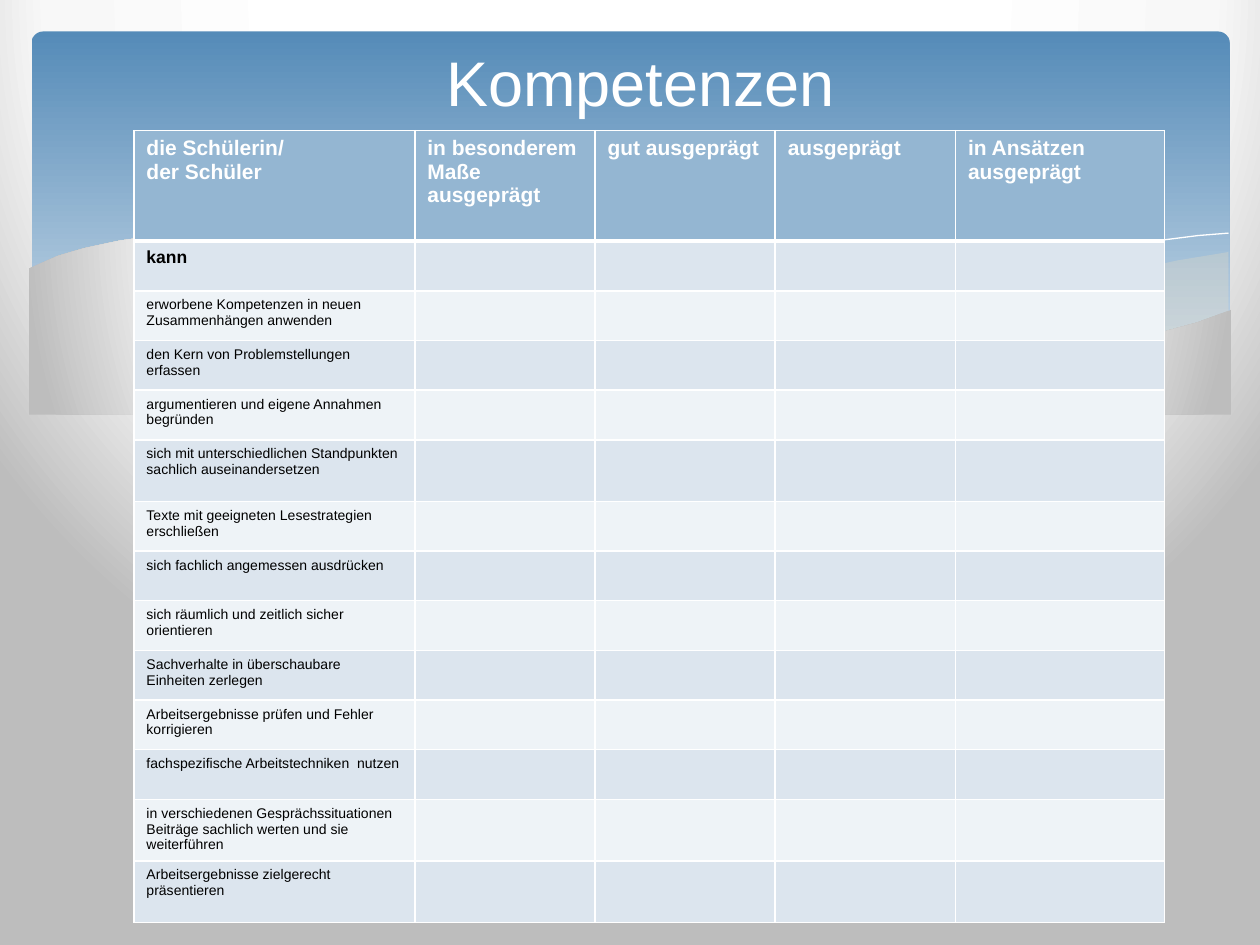
from lxml import etree
from pptx import Presentation
from pptx.dml.color import RGBColor
from pptx.enum import shapes, text
from pptx.oxml import ns, parse_xml
from pptx.util import Pt

WHITE = RGBColor(0xFF, 0xFF, 0xFF)
BLACK = RGBColor(0, 0, 0)
MIST = RGBColor(0xF8, 0xF8, 0xF8)
GREY = RGBColor(0xBD, 0xBD, 0xBD)
BLUE = RGBColor(0x55, 0x8B, 0xB8)
SKY = RGBColor(0xBF, 0xD3, 0xE4)
SAND = RGBColor(0xEB, 0xDD, 0xC3)
HEAD = RGBColor(0x94, 0xB6, 0xD2)
BANDS = (RGBColor(0xEE, 0xF3, 0xF7), RGBColor(0xDC, 0xE5, 0xEE))

GLOW = [(40, WHITE), (74, MIST), (100, GREY)]
ROUND = ('<a:path path="circle"><a:fillToRect l="20000" t="-40000" '
         'r="20000" b="140000"/></a:path>')
DOWN = '<a:lin ang="5400000" scaled="0"/>'

RIGHT = [(702, 144), (673, 148.8), (641.5, 155.5), (599, 165.6), (560.9, 174.2),
         (524.9, 182.2), (475.9, 190.8), (507.6, 194.4), (545, 198.7),
         (586, 200.2), (614.9, 198.7), (645.8, 194.4), (673, 188.6), (702, 177.8)]
WAVE = [(643, 196.6), (602.6, 190.8), (558, 182.9), (508.3, 172.8), (452.9, 159.8),
        (409.7, 149.8), (370.1, 142.6), (334.8, 137.5), (287.3, 133.9),
        (247.7, 133.9), (205.9, 137.5), (246.2, 143.3), (290.9, 151.9),
        (323.3, 159.8), (381.6, 172.8), (432.7, 183.6), (478.8, 191.5),
        (519.8, 197.3), (556.6, 199.4), (596.2, 200.2), (624.2, 198.7)]
CREST = [(222.5, 140.4), (247.7, 136.8), (278.6, 134.6), (311.8, 134.6),
         (352.1, 136.8), (400.3, 141.8), (457.9, 149.8), (523.4, 162.7),
         (598.3, 180.7), (653, 195.8)]
RISE = [(441.4, 185), (483.8, 173.5), (518.4, 164.9), (558.7, 155.5),
        (601.9, 146.9), (644.4, 139.7), (684.7, 134.6), (702, 133.2)]
FRONT = [(703.4, 177.1), (684, 184.3), (655.2, 192.2), (621.4, 197.3),
         (582.5, 199.4), (535.7, 197.3), (481, 190.8), (416.9, 180),
         (362.2, 167.8), (321.8, 158.4), (262.8, 145.4), (210.2, 136.8),
         (165.6, 133.2), (127.4, 132.5), (95, 133.9), (68.4, 137.5),
         (48.2, 141.8), (33.1, 146.2), (16.6, 153.4), (16.6, 236.9),
         (703.4, 236.9)]

TITLES = [["die Schülerin/", "der Schüler"], ["in besonderem Maße ausgeprägt"],
          ["gut ausgeprägt"], ["ausgeprägt"], ["in Ansätzen ausgeprägt"]]
SKILLS = [
    "kann",
    "erworbene Kompetenzen in neuen Zusammenhängen anwenden",
    "den Kern von Problemstellungen erfassen",
    "argumentieren und eigene Annahmen begründen",
    "sich mit unterschiedlichen Standpunkten sachlich auseinandersetzen",
    "Texte mit geeigneten Lesestrategien erschließen",
    "sich fachlich angemessen ausdrücken",
    "sich räumlich und zeitlich sicher orientieren",
    "Sachverhalte in überschaubare Einheiten zerlegen",
    "Arbeitsergebnisse prüfen und Fehler korrigieren",
    "fachspezifische Arbeitstechniken  nutzen",
    "in verschiedenen Gesprächssituationen Beiträge sachlich werten und sie weiterführen",
    "Arbeitsergebnisse zielgerecht präsentieren",
]
WIDTHS = [160.5, 103, 103, 103, 119.5]
TALL = {0: 63.2, 5: 35.2, 12: 35.2, 13: 35.2}
ROW = 28.4


class Deck:
    font = "Arial"

    def __init__(self, wide, high):
        self.prs = Presentation()
        self.prs.slide_width, self.prs.slide_height = Pt(wide), Pt(high)
        self.slide = self.prs.slides.add_slide(self.prs.slide_layouts[6])

    def blend(self, fill, root, stops, kind):
        """Give fill a gradient; root is the element that holds it."""
        fill.gradient()
        old = root.find(".//" + ns.qn("a:gradFill"))
        marks = "".join(f'<a:gs pos="{pos * 1000}"><a:srgbClr val="{tone}"/></a:gs>'
                        for pos, tone in stops)
        new = parse_xml(f'<a:gradFill {ns.nsdecls("a")} rotWithShape="1">'
                        f'<a:gsLst>{marks}</a:gsLst>{kind}</a:gradFill>')
        old.getparent().replace(old, new)

    def back(self, stops, kind):
        self.blend(self.slide.background.fill, self.slide.element, stops, kind)

    def panel(self, x, y, w, h, bend, stops, kind):
        box = self.slide.shapes.add_shape(
            shapes.MSO_SHAPE.ROUNDED_RECTANGLE, Pt(x), Pt(y), Pt(w), Pt(h))
        box.adjustments[0] = bend
        box.shadow.inherit = False
        box.line.fill.background()
        self.blend(box.fill, box.element, stops, kind)

    def trace(self, dots, close):
        """Draw an outline through dots, on a grid of tenths of a point."""
        grid = [(round(x * 10), round(y * 10)) for x, y in dots]
        pen = self.slide.shapes.build_freeform(*grid[0], scale=Pt(0.1))
        pen.add_line_segments(grid[1:], close=close)
        form = pen.convert_to_shape()
        form.shadow.inherit = False
        return form

    def area(self, dots):
        form = self.trace(dots, True)
        form.line.fill.background()
        return form

    def tint(self, dots, tone, part):
        form = self.area(dots)
        form.fill.solid()
        form.fill.fore_color.rgb = tone
        clr = form.element.spPr.find(".//" + ns.qn("a:srgbClr"))
        etree.SubElement(clr, ns.qn("a:alpha"), val=str(part * 1000))

    def curve(self, dots, tone):
        form = self.trace(dots, False)
        form.fill.background()
        form.line.color.rgb = tone
        form.line.width = Pt(0)

    def run(self, para, words, size, tone, bold=False):
        run = para.add_run()
        run.text = words
        run.font.name, run.font.size = self.font, Pt(size)
        run.font.color.rgb, run.font.bold = tone, bold

    def title(self, x, y, w, h, words, size):
        frame = self.slide.shapes.add_textbox(Pt(x), Pt(y), Pt(w), Pt(h)).text_frame
        frame.word_wrap = True
        frame.vertical_anchor = text.MSO_ANCHOR.MIDDLE
        frame.paragraphs[0].alignment = text.PP_ALIGN.CENTER
        self.run(frame.paragraphs[0], words, size, WHITE)

    def edge(self, cell, sides):
        """Put white borders on a cell; sides maps a side to its width."""
        props = cell._tc.get_or_add_tcPr()
        for spot, (side, width) in enumerate(sides.items()):
            props.insert(spot, parse_xml(
                f'<a:ln{side} {ns.nsdecls("a")} w="{Pt(width)}"><a:solidFill>'
                f'<a:srgbClr val="{WHITE}"/></a:solidFill></a:ln{side}>'))

    def cell(self, cell, lines, fill, size, tone, bold, top=1, foot=1):
        cell.fill.solid()
        cell.fill.fore_color.rgb = fill
        self.edge(cell, {"L": 1, "R": 1, "T": top, "B": foot})
        frame = cell.text_frame
        for num, words in enumerate(lines):
            para = frame.add_paragraph() if num else frame.paragraphs[0]
            self.run(para, words, size, tone, bold)
        if not lines:
            etree.SubElement(frame.paragraphs[0]._p, ns.qn("a:endParaRPr"),
                             sz=str(size * 100))

    def table(self, x, y, widths, heights):
        grid = self.slide.shapes.add_table(
            len(heights), len(widths), Pt(x), Pt(y),
            Pt(sum(widths)), Pt(sum(heights))).table
        for col, width in zip(grid.columns, widths):
            col.width = Pt(width)
        for row, height in zip(grid.rows, heights):
            row.height = Pt(height)
        return grid


def main():
    deck = Deck(720, 540)
    deck.back(GLOW, ROUND)
    deck.panel(18, 18, 684.7, 194.4, 0.034, [(0, BLUE), (90, SKY)], DOWN)
    deck.tint(RIGHT, SAND, 29)
    deck.tint(WAVE, SAND, 40)
    deck.curve(CREST, WHITE)
    deck.curve(RISE, WHITE)
    front = deck.area(FRONT)
    deck.blend(front.fill, front.element, GLOW, ROUND)

    heights = [TALL.get(num, ROW) for num in range(len(SKILLS) + 1)]
    grid = deck.table(76.5, 74.6, WIDTHS, heights)
    for col, lines in enumerate(TITLES):
        deck.cell(grid.cell(0, col), lines, HEAD, 12, WHITE, True, foot=3)
    for row, skill in enumerate(SKILLS, 1):
        first = row == 1
        for col in range(len(WIDTHS)):
            deck.cell(grid.cell(row, col), [] if col else [skill], BANDS[row % 2],
                      10 if first else 8, BLACK, first, top=3 if first else 1)

    deck.title(48.2, 15.1, 635.8, 62.6, "Kompetenzen", 36)
    deck.prs.save("out.pptx")


if __name__ == "__main__":
    main()
